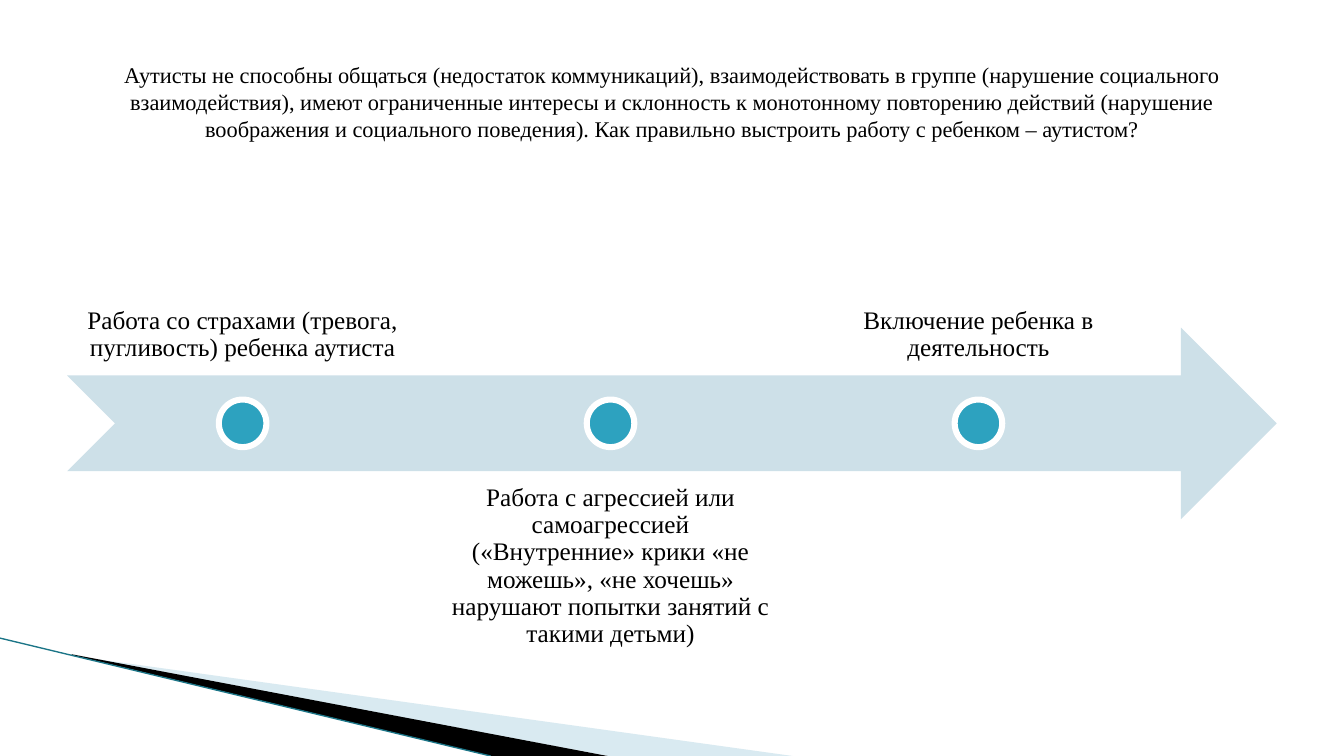
from dataclasses import dataclass
from typing import Any

from lxml.etree import SubElement
from pptx import Presentation
from pptx.dml.color import RGBColor
from pptx.enum.shapes import MSO_CONNECTOR as Connector, MSO_SHAPE as Preset
from pptx.enum.text import MSO_ANCHOR as Anchor, PP_ALIGN as Align
from pptx.oxml.ns import qn
from pptx.util import Pt


@dataclass(frozen=True)
class Theme:
    font: str = "Times New Roman"
    title_size: float = 16
    stage_size: float = 18
    text: str = "000000"
    arrow: str = "CDE0E8"
    dot: str = "2DA2BF"
    dot_outline: str = "FFFFFF"
    wedge_light: str = "A0CBDC"
    wedge_dark: str = "000000"
    edge: str = "1B7587"


@dataclass(frozen=True)
class Box:
    left: float
    top: float
    width: float
    height: float

    def lengths(self) -> tuple[Pt, ...]:
        return tuple(Pt(n) for n in (self.left, self.top, self.width, self.height))


@dataclass(frozen=True)
class Stage:
    text: str
    above: bool


@dataclass(frozen=True)
class Wedge:
    points: tuple[tuple[float, float], ...]
    color: str
    opacity: int = 100


THEME = Theme()
TITLE = (
    "Аутисты не способны общаться (недостаток коммуникаций), взаимодействовать в группе "
    "(нарушение социального взаимодействия), имеют ограниченные интересы и склонность к "
    "монотонному повторению действий (нарушение воображения и социального поведения). "
    "Как правильно выстроить работу с ребенком – аутистом?"
)
STAGES = (
    Stage("Работа со страхами (тревога, пугливость) ребенка аутиста", True),
    Stage(
        "Работа с агрессией или самоагрессией («Внутренние» крики «не можешь», "
        "«не хочешь» нарушают попытки занятий с такими детьми)",
        False,
    ),
    Stage("Включение ребенка в деятельность", True),
)
WEDGES = (
    Wedge(((52.5, 468.5), (566, 540), (434, 540)), THEME.wedge_light, 40),
    Wedge(((51, 467.3), (434, 540), (351, 540), (52, 468)), THEME.wedge_dark),
)
TITLE_BOX = Box(48, 21.6, 864, 102.2)
ARROW_BOX = Box(48, 234, 864, 136.8)
STAGE_WIDTH, STAGE_HEIGHT, STAGE_STEP = 250.6, 136.8, 262.8
ABOVE_TOP, BELOW_TOP = 131.8, 336.2
DOT_SIZE, DOT_LINE = 34, 4.33
STAGE_INSET = 10.1


def apply_format(target: Any, values: dict[str, Any]) -> None:
    for name, value in values.items():
        setattr(target, name, value)


def paint(shape: Any, color: str, outline: str = "", width: float = 0) -> None:
    shape.shadow.inherit = False
    shape.fill.solid()
    shape.fill.fore_color.rgb = RGBColor.from_string(color)
    if outline:
        shape.line.color.rgb = RGBColor.from_string(outline)
        shape.line.width = Pt(width)
    else:
        shape.line.fill.background()


def add_text(slide: Any, box: Box, text: str, size: float,
             frame_format: dict[str, Any], spacing: float = 1.0) -> None:
    frame = slide.shapes.add_textbox(*box.lengths()).text_frame
    apply_format(frame, {"word_wrap": True, **frame_format})
    paragraph = frame.paragraphs[0]
    apply_format(paragraph, {"alignment": Align.CENTER, "line_spacing": spacing})
    run = paragraph.add_run()
    run.text = text
    apply_format(run.font, {"name": THEME.font, "size": Pt(size)})
    run.font.color.rgb = RGBColor.from_string(THEME.text)


def add_wedge(slide: Any, wedge: Wedge) -> None:
    start, *rest = [(Pt(x), Pt(y)) for x, y in wedge.points]
    builder = slide.shapes.build_freeform(*start)
    builder.add_line_segments(rest, close=True)
    shape = builder.convert_to_shape()
    paint(shape, wedge.color)
    if wedge.opacity < 100:
        color = shape.element.spPr.find(qn("a:solidFill"))[0]
        SubElement(color, qn("a:alpha")).set("val", str(wedge.opacity * 1000))


def add_edge(slide: Any) -> None:
    line = slide.shapes.add_connector(
        Connector.STRAIGHT, Pt(0), Pt(455.8), Pt(350.5), Pt(540)
    )
    line.line.color.rgb = RGBColor.from_string(THEME.edge)
    line.line.width = Pt(0.95)
    SubElement(line.element.spPr, qn("a:effectLst"))


def add_stage(slide: Any, index: int, stage: Stage) -> None:
    left = ARROW_BOX.left + index * STAGE_STEP
    top = ABOVE_TOP if stage.above else BELOW_TOP
    sides = ("left", "top", "right", "bottom")
    frame_format = {f"margin_{side}": Pt(STAGE_INSET) for side in sides}
    frame_format["vertical_anchor"] = Anchor.BOTTOM if stage.above else Anchor.TOP
    add_text(slide, Box(left, top, STAGE_WIDTH, STAGE_HEIGHT), stage.text,
             THEME.stage_size, frame_format, 0.9)
    dot_box = Box(
        left + (STAGE_WIDTH - DOT_SIZE) / 2,
        ARROW_BOX.top + (ARROW_BOX.height - DOT_SIZE) / 2,
        DOT_SIZE,
        DOT_SIZE,
    )
    dot = slide.shapes.add_shape(Preset.OVAL, *dot_box.lengths())
    paint(dot, THEME.dot, THEME.dot_outline, DOT_LINE)


def main() -> None:
    presentation = Presentation()
    apply_format(presentation, {"slide_width": Pt(960), "slide_height": Pt(540)})
    slide = presentation.slides.add_slide(presentation.slide_layouts[6])
    for wedge in WEDGES:
        add_wedge(slide, wedge)
    add_edge(slide)
    arrow = slide.shapes.add_shape(Preset.NOTCHED_RIGHT_ARROW, *ARROW_BOX.lengths())
    paint(arrow, THEME.arrow)
    for index, stage in enumerate(STAGES):
        add_stage(slide, index, stage)
    add_text(slide, TITLE_BOX, TITLE, THEME.title_size,
             {"vertical_anchor": Anchor.MIDDLE})
    presentation.save("out.pptx")


if __name__ == "__main__":
    main()
